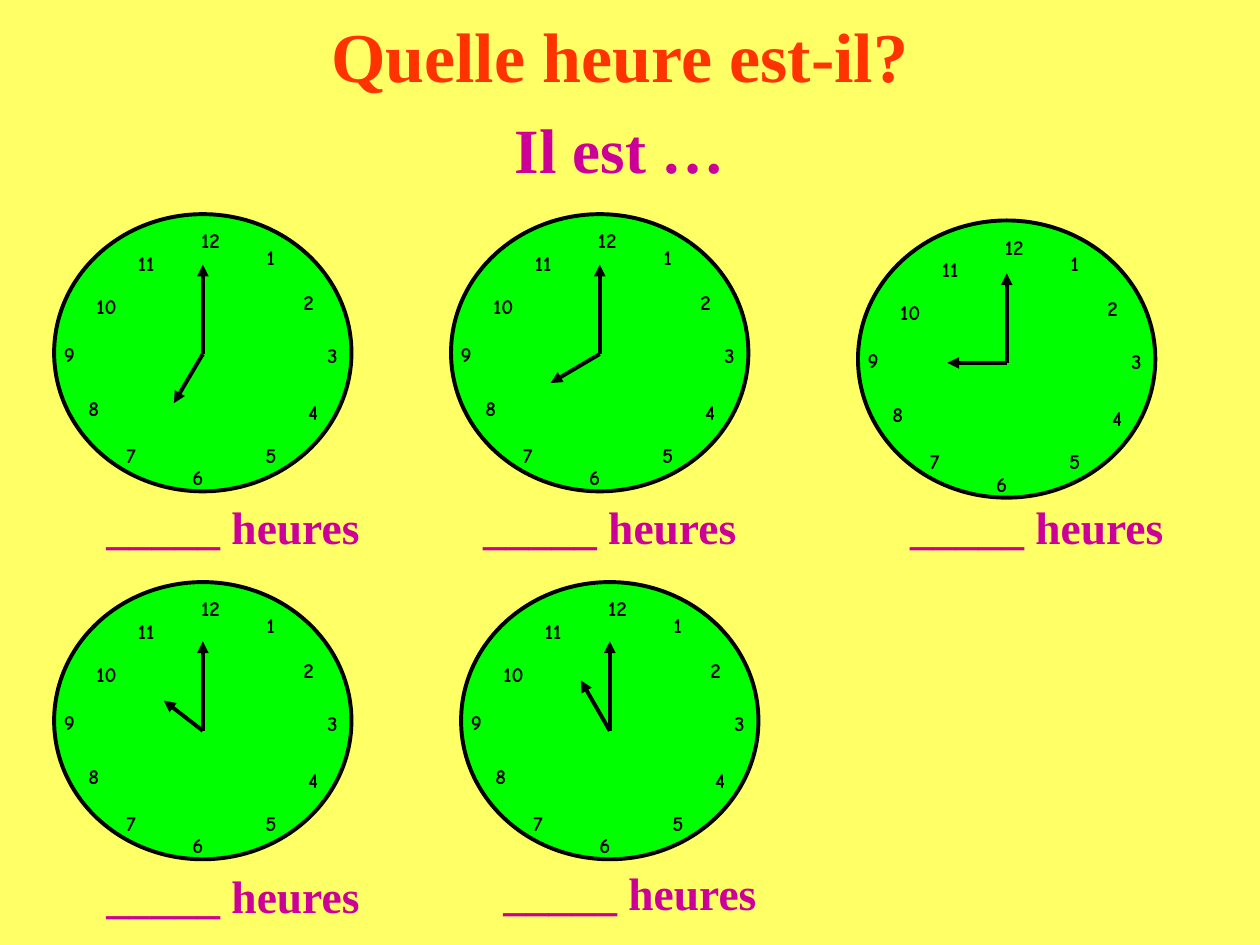
from lxml.etree import SubElement
from pptx import Presentation
from pptx.dml.color import RGBColor
from pptx.enum.shapes import MSO_CONNECTOR, MSO_SHAPE
from pptx.enum.text import PP_ALIGN
from pptx.oxml.ns import qn
from pptx.util import Inches, Pt

YELLOW = RGBColor(0xFF, 0xFF, 0x66)
GREEN = RGBColor(0x00, 0xFF, 0x00)
BLACK = RGBColor(0x00, 0x00, 0x00)
ORANGE = RGBColor(0xFF, 0x33, 0x00)
MAGENTA = RGBColor(0xCC, 0x00, 0x99)

DIAL_WIDTH, DIAL_HEIGHT = 2.36, 2.2
MINUTE_LENGTH = 0.71
NUMERAL_HEIGHT = 0.3

# Numeral: left, top and width of its box, from the corner of the dial
NUMERALS = {
    12: (1.03, 0.06, 0.42),
    1: (1.6, 0.19, 0.24),
    2: (1.9, 0.55, 0.24),
    3: (2.09, 0.97, 0.24),
    4: (1.93, 1.42, 0.25),
    5: (1.6, 1.76, 0.24),
    6: (1.02, 1.94, 0.24),
    7: (0.49, 1.76, 0.24),
    8: (0.19, 1.39, 0.25),
    9: (0, 0.96, 0.24),
    10: (0.19, 0.58, 0.45),
    11: (0.52, 0.24, 0.42),
}

# Dial corner, height of the pivot, reach of the hour hand, answer corner
CLOCKS = [
    ((0.43, 1.7), 2.81, (-0.23, 0.39), (0.59, 3.91)),
    ((3.58, 1.7), 2.81, (-0.39, 0.23), (3.58, 3.91)),
    ((6.81, 1.75), 2.88, (-0.47, 0), (6.97, 3.91)),
    ((0.43, 4.62), 5.8, (-0.31, -0.24), (0.59, 6.84)),
    ((3.66, 4.62), 5.8, (-0.23, -0.4), (3.74, 6.82)),
]


def add_text(shapes, text, left, top, width, height, *, size, color,
             font="Times New Roman"):
    box = shapes.add_textbox(Inches(left), Inches(top), Inches(width), Inches(height))
    frame = box.text_frame
    frame.word_wrap = True
    frame.margin_left = frame.margin_right = 0
    paragraph = frame.paragraphs[0]
    paragraph.alignment = PP_ALIGN.CENTER
    run = paragraph.add_run()
    run.text = text
    run.font.name = font
    run.font.size = Pt(size)
    run.font.bold = True
    run.font.color.rgb = color


def add_hand(shapes, pivot_x, pivot_y, reach_x, reach_y):
    hand = shapes.add_connector(
        MSO_CONNECTOR.STRAIGHT, Inches(pivot_x), Inches(pivot_y),
        Inches(pivot_x + reach_x), Inches(pivot_y + reach_y))
    hand.line.color.rgb = BLACK
    hand.line.width = Pt(2.25)
    SubElement(hand.line._get_or_add_ln(), qn("a:tailEnd"), type="triangle")
    SubElement(hand._element.spPr, qn("a:effectLst"))


def add_dial(slide, left, top):
    shapes = slide.shapes.add_group_shape().shapes
    face = shapes.add_shape(MSO_SHAPE.OVAL, Inches(left), Inches(top),
                            Inches(DIAL_WIDTH), Inches(DIAL_HEIGHT))
    face.shadow.inherit = False
    face.fill.solid()
    face.fill.fore_color.rgb = GREEN
    face.line.color.rgb = BLACK
    face.line.width = Pt(2.25)
    for number, (offset_x, offset_y, width) in NUMERALS.items():
        add_text(shapes, str(number), left + offset_x, top + offset_y, width,
                 NUMERAL_HEIGHT, size=12, color=BLACK, font="Comic Neue")


def add_clock(slide, corner, pivot_y, hour_reach, answer_corner):
    """Place a dial, its two hands and the answer line under it."""
    add_dial(slide, *corner)
    pivot_x = corner[0] + DIAL_WIDTH / 2
    for reach in (hour_reach, (0, -MINUTE_LENGTH)):
        add_hand(slide.shapes, pivot_x, pivot_y, *reach)
    add_text(slide.shapes, "_____ heures", *answer_corner, 2.52, 0.53,
             size=26, color=MAGENTA)


def add_headings(slide):
    add_text(slide.shapes, "Quelle heure est-il?", 2.48, 0.05, 4.88, 0.77,
             size=40, color=ORANGE)
    add_text(slide.shapes, "Il est …", 3.82, 0.83, 2.2, 0.7,
             size=36, color=MAGENTA)


def main():
    presentation = Presentation()
    presentation.slide_width = Inches(10)
    presentation.slide_height = Inches(7.5)
    slide = presentation.slides.add_slide(presentation.slide_layouts[6])
    slide.background.fill.solid()
    slide.background.fill.fore_color.rgb = YELLOW
    add_headings(slide)
    for clock in CLOCKS:
        add_clock(slide, *clock)
    presentation.save("out.pptx")


if __name__ == "__main__":
    main()
